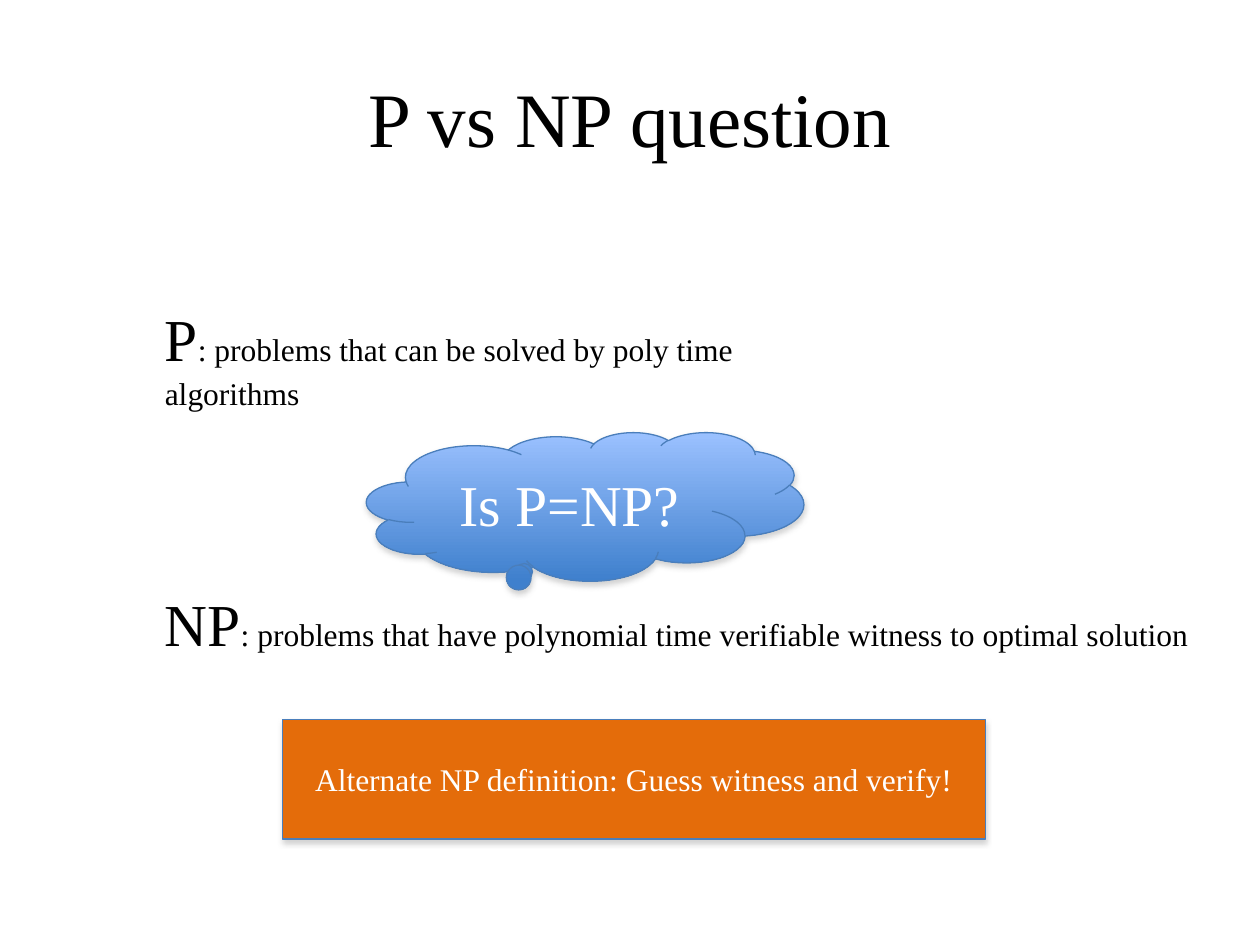
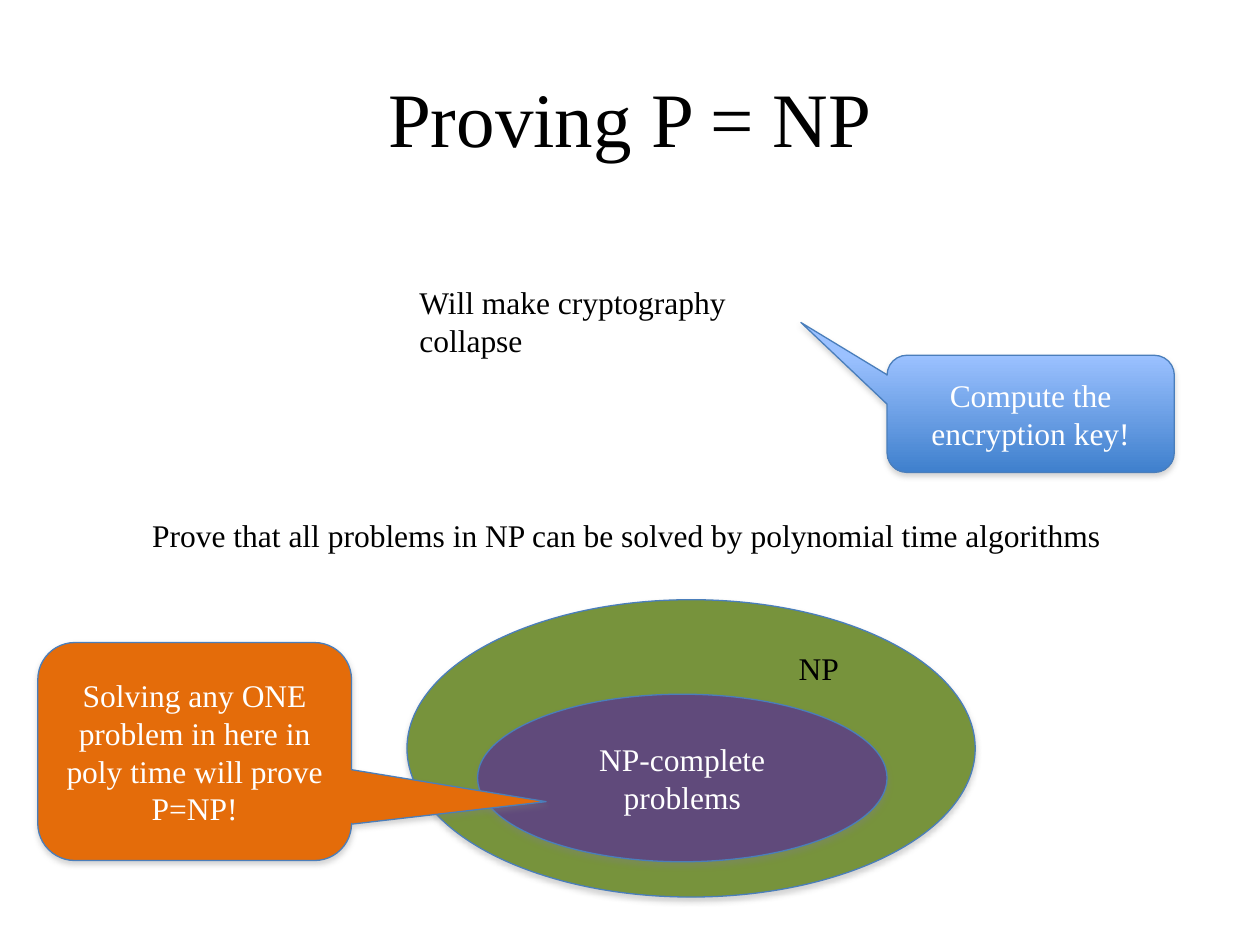
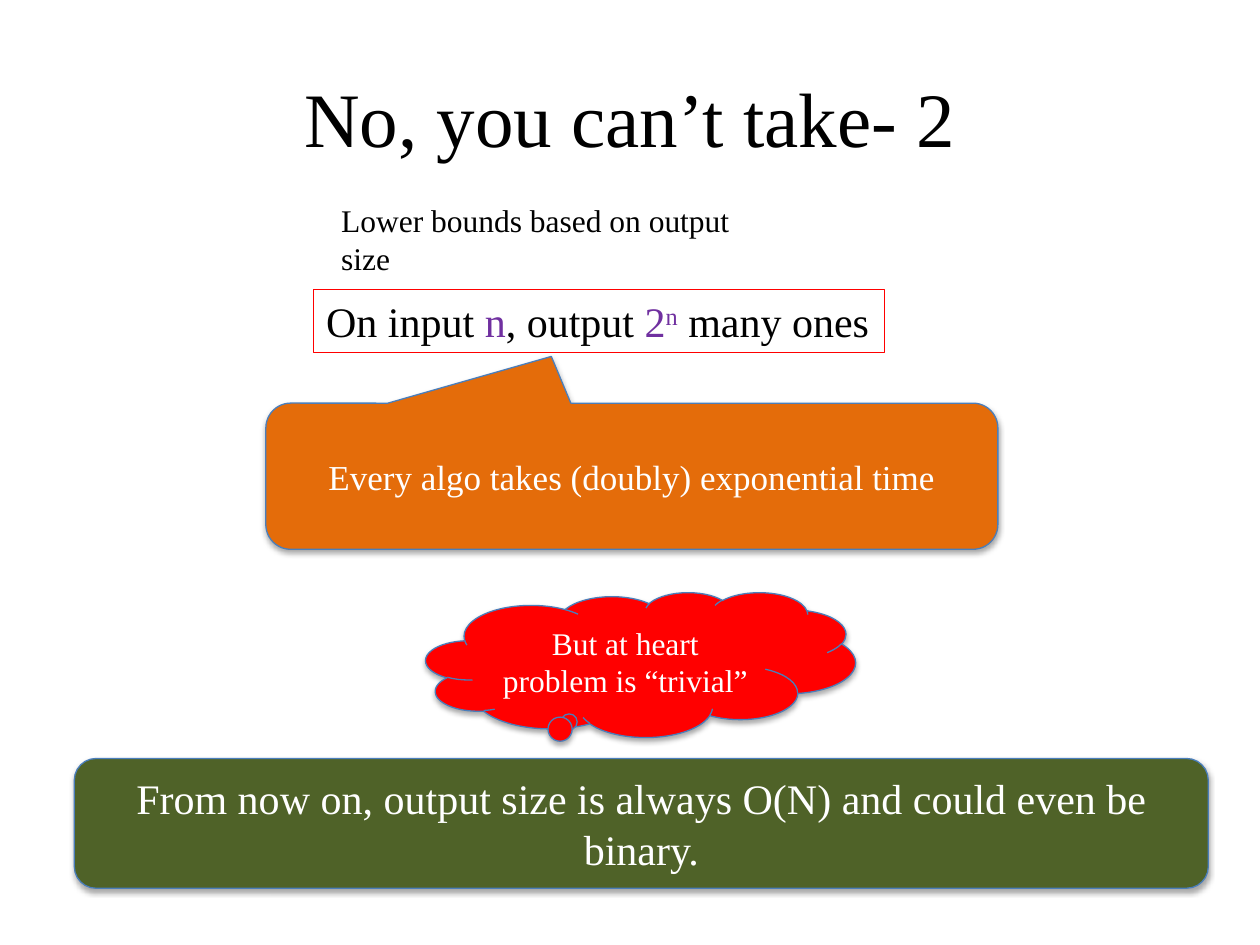
"""Build three slides on the P versus NP question."""
from dataclasses import dataclass
from typing import Any, Optional

import pptx
import pptx.dml.color
import pptx.enum.shapes
import pptx.enum.text
import pptx.oxml
import pptx.oxml.ns
import pptx.util
from pptx.util import Inches

FONT = "Times New Roman"
COLOURS = {
    "black": "000000",
    "white": "FFFFFF",
    "sky": "9BC1FF",
    "blue": "3F80CD",
    "outline": "4A7EBB",
    "orange": "E46C0A",
    "olive": "77933C",
    "forest": "4F6228",
    "plum": "604A7B",
    "purple": "7030A0",
    "red": "FF0000",
    "grey": "808080",
}
GRADIENT = ("sky", "blue")
SHAPES = pptx.enum.shapes.MSO_SHAPE
ALIGN = pptx.enum.text.PP_ALIGN
ANCHOR = pptx.enum.text.MSO_ANCHOR


@dataclass(frozen=True)
class Span:
    text: str
    size: float = 18
    colour: str = "black"
    raised: bool = False


@dataclass(frozen=True)
class Caption:
    at: tuple[float, float, float, float]
    spans: tuple[Span, ...]
    wrap_inset: Optional[float] = None
    border: Optional[str] = None


@dataclass(frozen=True)
class Figure:
    kind: Any
    at: tuple[float, float, float, float]
    fill: str | tuple[str, str]
    text: str = ""
    size: float = 18
    adjust: tuple[float, ...] = ()
    shadow: str = "grey"


@dataclass(frozen=True)
class Cluster:
    items: tuple[Caption | Figure, ...]


@dataclass(frozen=True)
class Page:
    title: str
    items: tuple[Caption | Figure | Cluster, ...]


def colour(name: str) -> pptx.dml.color.RGBColor:
    return pptx.dml.color.RGBColor.from_string(COLOURS[name])


def place(at: tuple[float, float, float, float]) -> list[int]:
    return [Inches(length) for length in at]


def write_text(box: Any, spans: tuple[Span, ...], *, align: Any = ALIGN.CENTER,
               anchor: Any = ANCHOR.MIDDLE, wrap: bool = True) -> None:
    frame = box.text_frame
    frame.word_wrap = wrap
    frame.vertical_anchor = anchor
    para = frame.paragraphs[0]
    para.alignment = align
    for span in spans:
        run = para.add_run()
        run.text = span.text
        run.font.name = FONT
        run.font.size = pptx.util.Pt(span.size)
        run.font.color.rgb = colour(span.colour)
        if span.raised:
            run._r.get_or_add_rPr().set("baseline", "30000")


def draw_line(shape: Any, name: str) -> None:
    shape.line.color.rgb = colour(name)
    shape.line.width = pptx.util.Pt(0.75)


def add_shadow(shape: Any, name: str) -> None:
    shape.shadow.inherit = False
    effects = shape._element.spPr.find(pptx.oxml.ns.qn("a:effectLst"))
    effects.append(pptx.oxml.parse_xml(
        f'<a:outerShdw {pptx.oxml.ns.nsdecls("a")} blurRad="40000" dist="23000" '
        f'dir="5400000" rotWithShape="0"><a:srgbClr val="{COLOURS[name]}">'
        '<a:alpha val="35000"/></a:srgbClr></a:outerShdw>'))


def add_caption(shapes: Any, caption: Caption) -> None:
    box = shapes.add_textbox(*place(caption.at))
    write_text(box, caption.spans, align=ALIGN.LEFT, anchor=ANCHOR.TOP,
               wrap=caption.wrap_inset is not None)
    box.text_frame.auto_size = pptx.enum.text.MSO_AUTO_SIZE.SHAPE_TO_FIT_TEXT
    if caption.wrap_inset is not None:
        box.text_frame.margin_right = Inches(caption.wrap_inset)
    if caption.border:
        draw_line(box, caption.border)


def add_figure(shapes: Any, figure: Figure) -> None:
    shape = shapes.add_shape(figure.kind, *place(figure.at))
    for index, value in enumerate(figure.adjust):
        shape.adjustments[index] = value
    if isinstance(figure.fill, tuple):
        shape.fill.gradient()
        shape.fill.gradient_angle = 270
        for position, (stop, name) in enumerate(zip(shape.fill.gradient_stops, figure.fill)):
            stop.position = position
            stop.color.rgb = colour(name)
    else:
        shape.fill.solid()
        shape.fill.fore_color.rgb = colour(figure.fill)
    draw_line(shape, "outline")
    add_shadow(shape, figure.shadow)
    if figure.text:
        write_text(shape, (Span(figure.text, figure.size, "white"),))


def add_items(shapes: Any, items: tuple[Caption | Figure | Cluster, ...]) -> None:
    for item in items:
        if isinstance(item, Cluster):
            add_items(shapes.add_group_shape().shapes, item.items)
        elif isinstance(item, Caption):
            add_caption(shapes, item)
        else:
            add_figure(shapes, item)


def add_page(deck: Any, page: Page) -> None:
    slide = deck.slides.add_slide(deck.slide_layouts.get_by_name("Title Only"))
    title = slide.shapes.title
    title.left, title.top, title.width, title.height = place((0.5, 0.3, 9, 1.25))
    write_text(title, (Span(page.title, 44),))
    add_items(slide.shapes, page.items)


PAGES = (
    Page("P vs NP question", (
        Caption((1.21, 2.35, 5.7, 0.67), (
            Span("P", 34), Span(": problems that can be solved by poly time algorithms")),
            wrap_inset=0.3),
        Caption((1.21, 4.61, 8.44, 0.67), (
            Span("NP", 34),
            Span(": problems that have polynomial time verifiable witness to optimal solution"))),
        Figure(SHAPES.CLOUD_CALLOUT, (2.91, 3.43, 3.47, 1.18), GRADIENT, "Is P=NP?", 33,
               (-0.14, 0.44)),
        Figure(SHAPES.RECTANGLE, (2.24, 5.71, 5.58, 0.95), "orange",
               "Alternate NP definition: Guess witness and verify!"),
    )),
    Page("Proving P = NP", (
        Caption((3.23, 2.2, 3.51, 0.4), (Span("Will make cryptography collapse"),),
                wrap_inset=0.3),
        Figure(SHAPES.ROUNDED_RECTANGULAR_CALLOUT, (7.04, 2.82, 2.28, 0.93), GRADIENT,
               "Compute the encryption key!", adjust=(-0.8, -0.78, 0.17)),
        Caption((1.11, 4.05, 7.8, 0.4), (
            Span("Prove that all problems in NP can be solved by polynomial time algorithms"),)),
        Cluster((
            Figure(SHAPES.OVAL, (3.23, 4.76, 4.51, 2.36), "olive"),
            Caption((6.24, 5.1, 0.54, 0.4), (Span("NP"),)),
        )),
        Figure(SHAPES.OVAL, (3.79, 5.51, 3.25, 1.33), "plum", "NP-complete problems"),
        Figure(SHAPES.ROUNDED_RECTANGULAR_CALLOUT, (0.3, 5.1, 2.49, 1.73), "orange",
               "Solving any ONE problem in here in poly time will prove P=NP!",
               adjust=(1.12, 0.23, 0.17)),
    )),
    Page("No, you can’t take- 2", (
        Caption((2.61, 1.55, 3.7, 0.4), (Span("Lower bounds based on output size"),),
                wrap_inset=0.3),
        Caption((2.49, 2.3, 4.53, 0.5), (
            Span("On input ", 24), Span("n", 24, "purple"), Span(", output ", 24),
            Span("2", 24, "purple"), Span("n", 24, "purple", raised=True),
            Span(" many ones", 24)), border="red"),
        Figure(SHAPES.ROUNDED_RECTANGULAR_CALLOUT, (2.11, 3.2, 5.81, 1.16), "orange",
               "Every algo takes (doubly) exponential time", 20, (-0.11, -0.82, 0.17), "black"),
        Figure(SHAPES.CLOUD_CALLOUT, (3.38, 4.7, 3.41, 1.15), "red",
               "But at heart problem is “trivial”", adjust=(-0.16, 0.38), shadow="black"),
        Figure(SHAPES.ROUNDED_RECTANGLE, (0.59, 6.02, 9, 1.03), "forest",
               "From now on, output size is always O(N) and could even be binary.", 24,
               shadow="black"),
    )),
)


def main() -> None:
    deck = pptx.Presentation()
    deck.slide_width, deck.slide_height = Inches(10), Inches(7.5)
    for page in PAGES:
        add_page(deck, page)
    deck.save("out.pptx")


if __name__ == "__main__":
    main()
